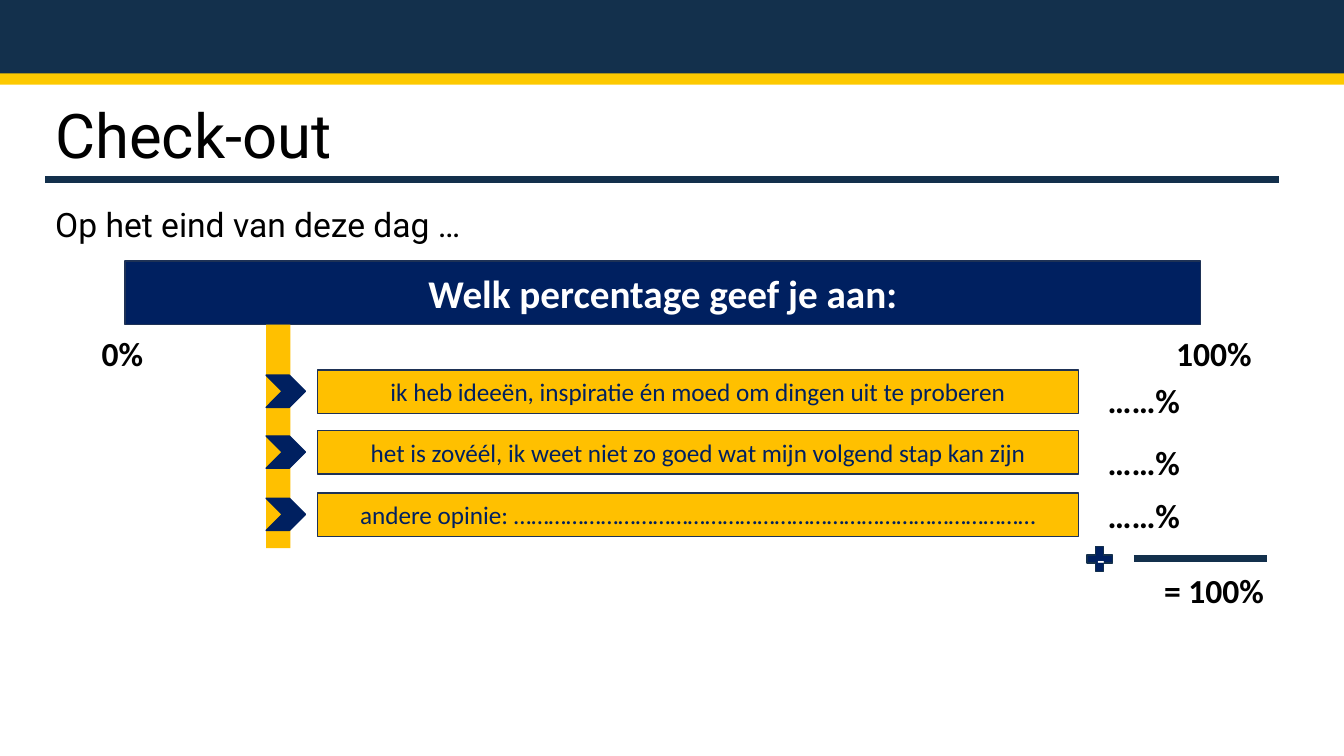
from lxml import etree
from pptx import Presentation, util as u
from pptx.dml.color import RGBColor
from pptx.enum import shapes, text
from pptx.oxml.ns import qn

Pt = u.Pt
kinds = shapes.MSO_SHAPE
hues = {
    "gold": "FDC900", "amber": "FFC000", "night": "13304C", "navy": "002060",
    "edge": "1E3256", "white": "FFFFFF", "black": "000000",
}
tint = {name: RGBColor.from_string(code) for name, code in hues.items()}

deck = Presentation()
deck.slide_width, deck.slide_height = Pt(960), Pt(540)
slide = deck.slides.add_slide(deck.slide_layouts[6])
slide.background.fill.solid()
slide.background.fill.fore_color.rgb = tint["gold"]


def draw(kind, box, fill, edge=None):
    form = slide.shapes.add_shape(kind, *map(Pt, box))
    form.shadow.inherit = False
    form.fill.solid()
    form.fill.fore_color.rgb = tint[fill]
    if edge:
        form.line.color.rgb = tint[edge]
        form.line.width = Pt(1)
    else:
        form.line.fill.background()
    return form


def write(form, words, hue, font, align="LEFT", anchor="TOP", space=None):
    frame = form.text_frame
    frame.word_wrap = True
    frame.vertical_anchor = getattr(text.MSO_ANCHOR, anchor)
    para = frame.paragraphs[0]
    para.alignment = getattr(text.PP_ALIGN, align)
    para.line_spacing = space
    run = para.add_run()
    run.text = words
    run.font.color.rgb = tint[hue]
    for key, value in font.items():
        setattr(run.font, key, value)


title = {"name": "Roboto", "size": Pt(44)}
lead = {"name": "Roboto", "size": Pt(24)}
head = {"name": "Calibri", "size": Pt(28), "bold": True}
mark = {"name": "Calibri", "size": Pt(24), "bold": True}
plain = {"name": "Calibri", "size": Pt(18)}

draw(kinds.RECTANGLE, (0, 0, 960, 52.5), "night")
draw(kinds.RECTANGLE, (0, 60.5, 960, 479.5), "white")

for left, right, top in [(32.4, 913.7, 128.2), (810, 905, 398.9)]:
    rule = slide.shapes.add_connector(
        shapes.MSO_CONNECTOR.STRAIGHT, Pt(left), Pt(top), Pt(right), Pt(top))
    rule.line.color.rgb = tint["night"]
    rule.line.width = Pt(4.5)
    etree.SubElement(rule._element.spPr, qn("a:effectLst"))

for words, box, font, anchor in [
    ("Check-out", (32.4, 74.9, 881.3, 48.2), title, "MIDDLE"),
    ("Op het eind van deze dag …", (32.4, 145.4, 881.3, 348.5), lead, "TOP"),
]:
    write(slide.shapes.add_textbox(*map(Pt, box)), words, "black", font,
          anchor=anchor, space=0.9)

banner = draw(kinds.RECTANGLE, (89.3, 186.5, 768.2, 45.4), "navy", "edge")
write(banner, "Welk percentage geef je aan:", "white", head, "CENTER", "MIDDLE")
draw(kinds.RECTANGLE, (190.1, 231.8, 17.3, 159.8), "amber")

rows = [
    ("ik heb ideeën, inspiratie én moed om dingen uit te proberen", 264.2),
    ("het is zovéél, ik weet niet zo goed wat mijn volgend stap kan zijn", 307.6),
    ("andere opinie: ………………………………………………………………………………", 352.1),
]
for words, top in rows:
    bar = draw(kinds.RECTANGLE, (226.8, top, 543.6, 31), "amber", "edge")
    write(bar, words, "navy", plain, "CENTER", "MIDDLE")
    draw(kinds.CHEVRON, (190.1, top + 3.8, 28.1, 23), "navy", "navy")

for words, left, top, width in [
    ("0%", 65.5, 234, 73.4),
    ("100%", 833, 234, 73.4),
    ("……%", 784.1, 267.8, 73.4),
    ("……%", 784.1, 311.8, 73.4),
    ("……%", 784.1, 349.9, 73.4),
    ("= 100%", 824.4, 403.2, 95),
]:
    label = slide.shapes.add_textbox(Pt(left), Pt(top), Pt(width), Pt(36))
    write(label, words, "black", mark)

plus = draw(kinds.MATH_PLUS, (773.3, 387.4, 24.5, 23.8), "navy", "night")
write(plus, "-", "white", plain, "CENTER", "MIDDLE")

deck.save("out.pptx")
